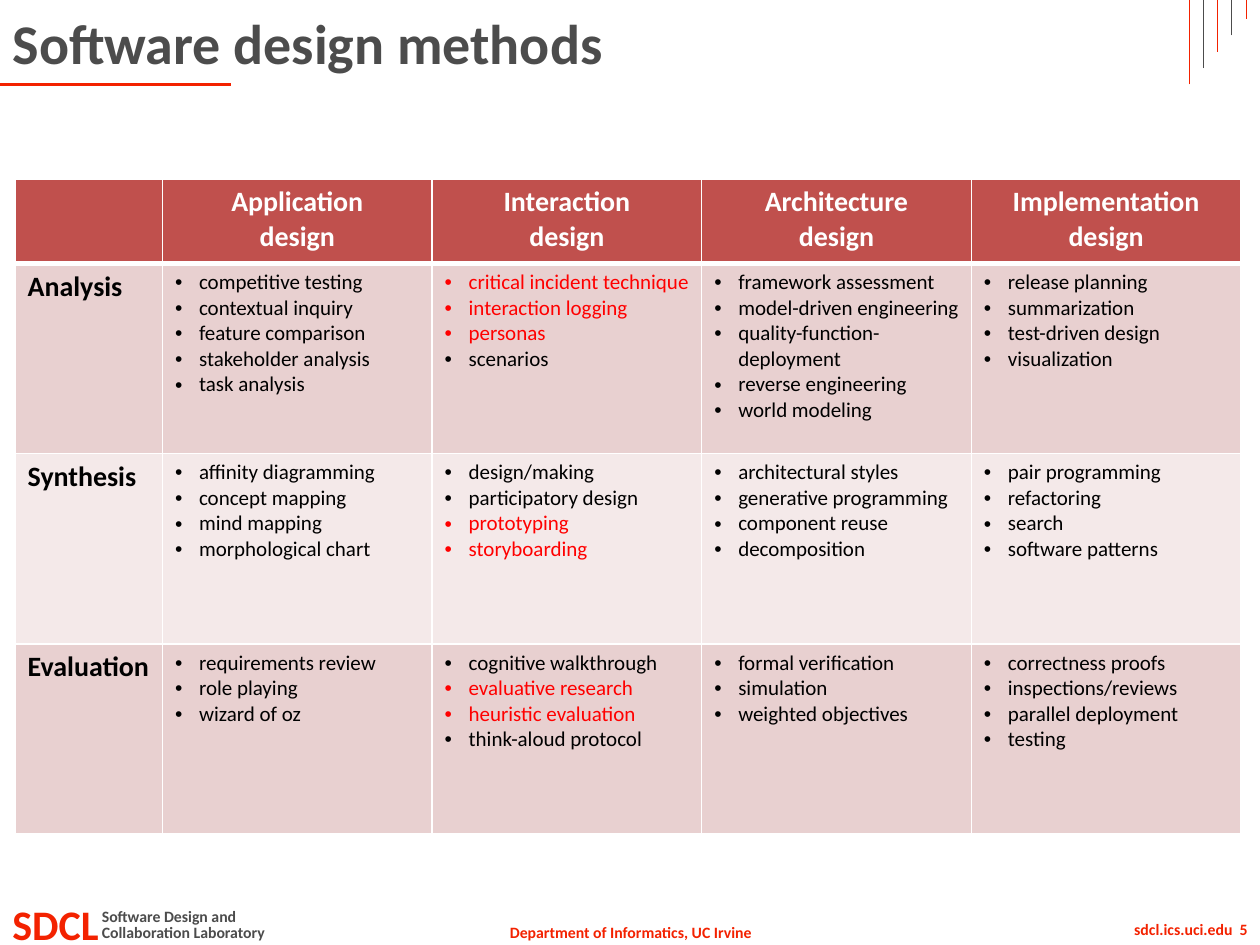
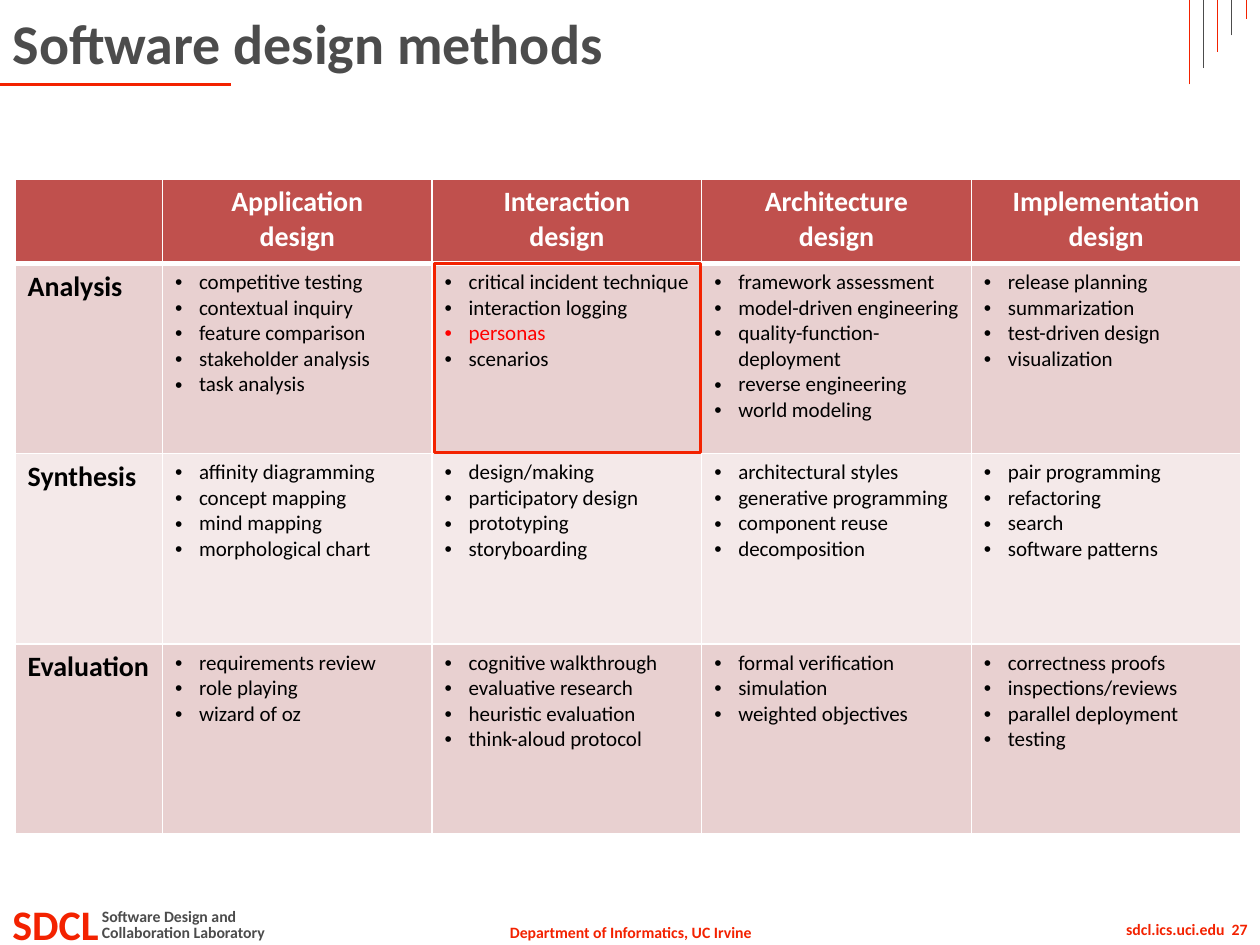
from lxml import etree
from pptx import Presentation
from pptx.dml.color import RGBColor
from pptx.enum.shapes import MSO_CONNECTOR as Connector, MSO_SHAPE as Shape
from pptx.enum.text import MSO_ANCHOR as Anchor, MSO_AUTO_SIZE as AutoSize, PP_ALIGN as Align
from pptx.oxml.ns import qn
from pptx.util import Inches, Pt

FONT = "Calibri"
COLORS = {
    "accent": "F32200",
    "gray": "4C4C4C",
    "header": "C0504D",
    "band_dark": "E8D0D0",
    "band_light": "F4E9E9",
    "white": "FFFFFF",
    "black": "000000",
    "marked": "FF0000",
}

TITLE = "Software design methods"
TITLE_BOX = (0, 0, 9, 0.67)
FOOTER_TOP = 7.08
TABLE_LEFT, TABLE_TOP = 0.12, 1.42
LABEL_WIDTH, METHOD_WIDTH = 1.17, 2.14
HEADER_HEIGHT, STAGE_HEIGHT = 0.67, 1.51

DESIGN_KINDS = ["Application", "Interaction", "Architecture", "Implementation"]
STAGES = {
    "Analysis": [
        ["competitive testing", "contextual inquiry", "feature comparison",
         "stakeholder analysis", "task analysis"],
        ["critical incident technique", "interaction logging", "personas", "scenarios"],
        ["framework assessment", "model-driven engineering",
         "quality-function-deployment", "reverse engineering", "world modeling"],
        ["release planning", "summarization", "test-driven design", "visualization"],
    ],
    "Synthesis": [
        ["affinity diagramming", "concept mapping", "mind mapping", "morphological chart"],
        ["design/making", "participatory design", "prototyping", "storyboarding"],
        ["architectural styles", "generative programming", "component reuse",
         "decomposition"],
        ["pair programming", "refactoring", "search", "software patterns"],
    ],
    "Evaluation": [
        ["requirements review", "role playing", "wizard of oz"],
        ["cognitive walkthrough", "evaluative research", "heuristic evaluation",
         "think-aloud protocol"],
        ["formal verification", "simulation", "weighted objectives"],
        ["correctness proofs", "inspections/reviews", "parallel deployment", "testing"],
    ],
}
USED_METHODS = {
    "critical incident technique", "interaction logging", "personas", "prototyping",
    "storyboarding", "evaluative research", "heuristic evaluation",
}


def rgb(name):
    return RGBColor.from_string(COLORS[name])


def style(paragraph, size, color, bold=True, align=Align.LEFT):
    paragraph.alignment = align
    for run in paragraph.runs:
        font = run.font
        font.name, font.size, font.bold = FONT, Pt(size), bold
        font.color.rgb = rgb(color)


def add_rule(slide, start, end, color, weight):
    points = [Inches(value) for value in (*start, *end)]
    rule = slide.shapes.add_connector(Connector.STRAIGHT, *points)
    rule.line.color.rgb = rgb(color)
    rule.line.width = Pt(weight)
    etree.SubElement(rule._element.spPr, qn("a:effectLst"))


def add_label(slide, box, text, size, color, align=Align.LEFT, wrap=False):
    frame = slide.shapes.add_textbox(*map(Inches, box)).text_frame
    frame.text = text
    frame.word_wrap = wrap
    frame.auto_size = AutoSize.SHAPE_TO_FIT_TEXT
    style(frame.paragraphs[0], size, color, align=align)


def add_footer(slide, top, page):
    add_label(slide, (3.93, top + 0.19, 2.15, 0.25),
              "Department of Informatics, UC Irvine", 9, "accent", Align.CENTER)
    add_label(slide, (0, top, 1, 0.5), "SDCL", 24, "accent", wrap=True)
    add_label(slide, (0.71, top + 0.19, 1.53, 0.25), "Collaboration Laboratory", 9, "gray")
    add_label(slide, (0.71, top + 0.07, 1.29, 0.25), "Software Design and", 9, "gray")
    add_label(slide, (7.84, top + 0.17, 2.16, 0.25), f"sdcl.ics.uci.edu  {page}",
              9, "accent", Align.RIGHT, wrap=True)


def add_title_band(slide, box):
    """Fill the title and draw its underline and the corner stripes."""
    left, top, width, height = box
    title = slide.shapes.title
    title.left, title.top, title.width, title.height = map(Inches, box)
    frame = title.text_frame
    frame.text = TITLE
    frame.vertical_anchor = Anchor.MIDDLE
    frame.auto_size = AutoSize.NONE
    style(frame.paragraphs[0], 32, "gray")

    bottom = top + height
    add_rule(slide, (left, bottom), (left + 1.83, bottom), "accent", 1.5)
    for i in range(5):
        x = left + width + 0.44 + i * 0.45 / 4
        color = "gray" if i % 2 else "accent"
        add_rule(slide, (x, bottom - 0.13 * i), (x, top), color, 0.5)


def format_cell(cell, fill, top=1, bottom=1):
    """Give a cell its fill and white borders, with widths in points."""
    properties = cell._tc.get_or_add_tcPr()
    for side, weight in (("L", 1), ("R", 1), ("T", top), ("B", bottom)):
        border = etree.SubElement(properties, qn(f"a:ln{side}"), w=str(Pt(weight)))
        solid = etree.SubElement(border, qn("a:solidFill"))
        etree.SubElement(solid, qn("a:srgbClr"), val=COLORS["white"])
    cell.fill.solid()
    cell.fill.fore_color.rgb = rgb(fill)


def fill_methods(cell, methods, marked):
    frame = cell.text_frame
    frame.text = "\n".join(methods)
    for paragraph, method in zip(frame.paragraphs, methods):
        properties = paragraph._p.get_or_add_pPr()
        properties.set("marL", str(Inches(0.19)))
        properties.set("indent", str(Inches(-0.19)))
        etree.SubElement(properties, qn("a:buFont"), typeface="Arial")
        etree.SubElement(properties, qn("a:buChar"), char="•")
        style(paragraph, 12, "marked" if method in marked else "black", bold=False)


def add_methods_table(slide, left, top, marked):
    rows, columns = len(STAGES) + 1, len(DESIGN_KINDS) + 1
    width = LABEL_WIDTH + METHOD_WIDTH * len(DESIGN_KINDS)
    height = HEADER_HEIGHT + STAGE_HEIGHT * len(STAGES)
    table = slide.shapes.add_table(
        rows, columns, *map(Inches, (left, top, width, height))).table
    for i, column in enumerate(table.columns):
        column.width = Inches(METHOD_WIDTH if i else LABEL_WIDTH)
    for i, row in enumerate(table.rows):
        row.height = Inches(STAGE_HEIGHT if i else HEADER_HEIGHT)

    for i, kind in enumerate(["", *DESIGN_KINDS]):
        cell = table.cell(0, i)
        format_cell(cell, "header", bottom=3)
        if kind:
            heading = cell.text_frame.paragraphs[0]
            heading.text = f"{kind}\vdesign"
            style(heading, 16, "white", align=Align.CENTER)

    for i, (stage, method_lists) in enumerate(STAGES.items(), start=1):
        for j in range(columns):
            format_cell(table.cell(i, j), "band_dark" if i % 2 else "band_light",
                        top=3 if i == 1 else 1)
        label = table.cell(i, 0).text_frame
        label.text = stage
        style(label.paragraphs[0], 16, "black")
        for j, methods in enumerate(method_lists, start=1):
            fill_methods(table.cell(i, j), methods, marked)


def add_cell_outline(slide, stage, kind):
    """Frame the table cell of a stage and a design kind, counted from 0."""
    left = TABLE_LEFT + LABEL_WIDTH + METHOD_WIDTH * kind + 0.02
    top = TABLE_TOP + HEADER_HEIGHT + STAGE_HEIGHT * stage
    box = (left, top, METHOD_WIDTH - 0.03, STAGE_HEIGHT - 0.01)
    outline = slide.shapes.add_shape(Shape.RECTANGLE, *map(Inches, box))
    outline.shadow.inherit = False
    outline.fill.background()
    outline.line.color.rgb = rgb("accent")
    outline.line.width = Pt(2)


def add_methods_slide(deck, page, marked):
    slide = deck.slides.add_slide(deck.slide_layouts.get_by_name("Title Only"))
    add_footer(slide, FOOTER_TOP, page)
    add_title_band(slide, TITLE_BOX)
    add_methods_table(slide, TABLE_LEFT, TABLE_TOP, marked)
    return slide


def main():
    deck = Presentation()
    deck.slide_width, deck.slide_height = Inches(10), Inches(7.5)
    add_methods_slide(deck, 5, USED_METHODS)
    personas = add_methods_slide(deck, 27, {"personas"})
    add_cell_outline(personas, stage=0, kind=1)
    deck.save("out.pptx")


if __name__ == "__main__":
    main()
